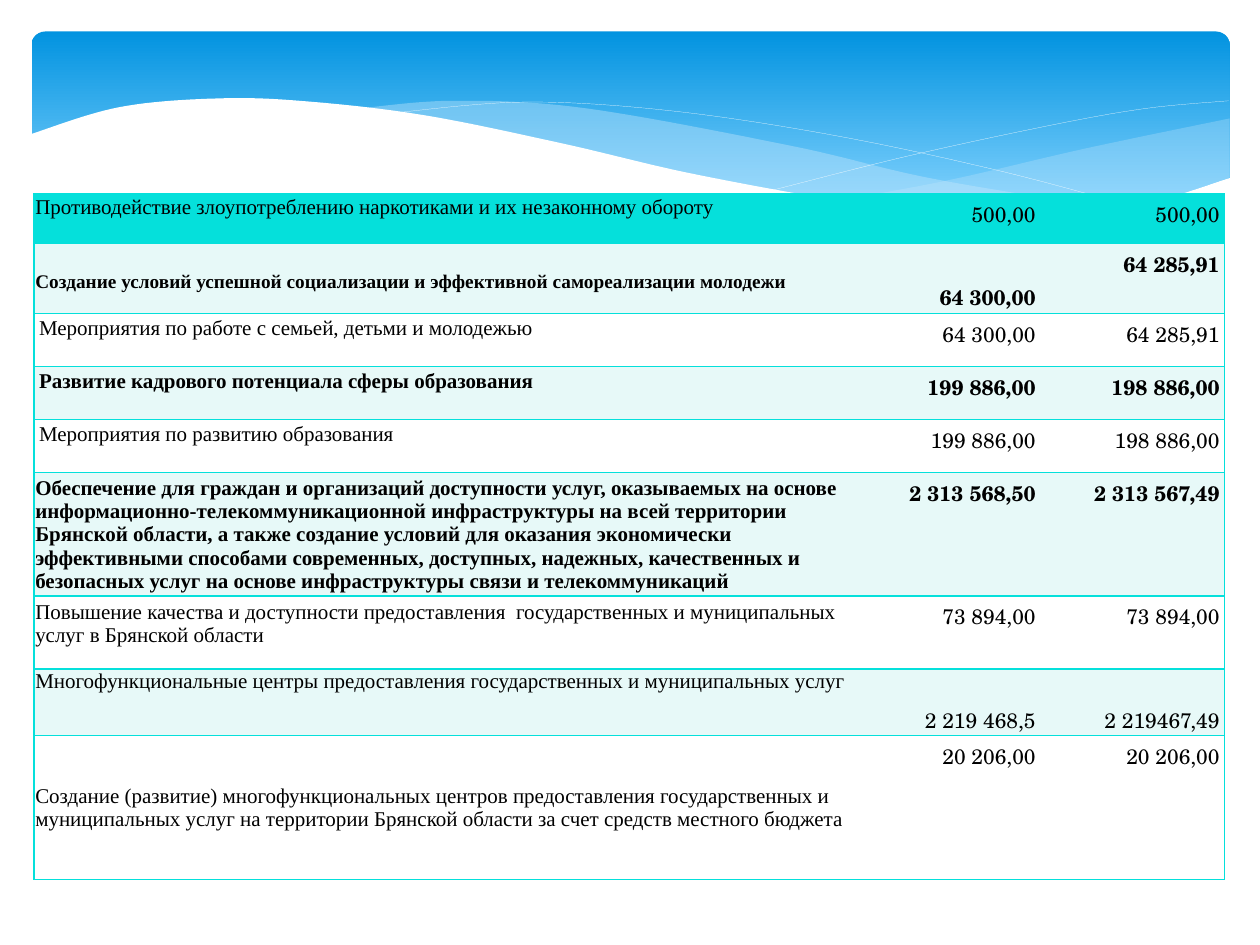
from collections import namedtuple
from itertools import pairwise

from lxml.etree import SubElement
from pptx import Presentation
from pptx.dml.color import RGBColor
from pptx.enum.shapes import MSO_SHAPE as Shape
from pptx.enum.text import MSO_ANCHOR as Anchor, PP_ALIGN as Align
from pptx.oxml.ns import qn
from pptx.util import Inches, Pt

COLORS = {"sky": "0293E0", "light sky": "83D3FE", "wave": "C6E7FC", "white": "FFFFFF",
          "black": "000000", "turquoise": "05E0DB", "pale": "E7F9F8"}
RGB = {name: RGBColor.from_string(value) for name, value in COLORS.items()}
CURVE_STEPS = 12


def smooth_curve(knots):
    """Sample a Catmull-Rom curve through the knots; two knots give a straight line."""
    padded = [knots[0], *knots, knots[-1]]
    points = [knots[0]]
    for index, (start, end) in enumerate(pairwise(knots)):
        before, after = padded[index], padded[index + 3]
        for step in range(1, CURVE_STEPS + 1):
            t = step / CURVE_STEPS
            points.append(tuple(
                b + t / 2 * (c - a + t * (2 * a - 5 * b + 4 * c - d
                                          + t * (3 * (b - c) + d - a)))
                for a, b, c, d in zip(before, start, end, after)))
    return points


def set_borders(cell, visible):
    """Draw the named cell sides in turquoise and hide the others."""
    properties = cell._tc.get_or_add_tcPr()
    for index, side in enumerate(("lnL", "lnR", "lnT", "lnB")):
        line = properties.makeelement(qn(f"a:{side}"), {"w": str(Pt(1))})
        properties.insert(index, line)
        if side in visible:
            solid = SubElement(line, qn("a:solidFill"))
            SubElement(solid, qn("a:srgbClr"), val=COLORS["turquoise"])
        else:
            SubElement(line, qn("a:noFill"))


deck = Presentation()
deck.slide_width, deck.slide_height = Inches(10), Inches(7.5)
slide = deck.slides.add_slide(deck.slide_layouts[6])

# Header band
band = slide.shapes.add_shape(
    Shape.ROUNDED_RECTANGLE, Inches(0.25), Inches(0.25), Inches(9.51), Inches(1.56))
band.adjustments[0] = 0.07
band.shadow.inherit = False
band.line.fill.background()
band.fill.gradient()
band.fill.gradient_angle = 270
for stop, position, name in zip(band.fill.gradient_stops, (0, 0.9), ("sky", "light sky")):
    stop.position = position
    stop.color.rgb = RGB[name]

# Waves over the band: each edge is a smooth curve through its crests and slopes.
# A wave without a fill is a white hairline.
Wave = namedtuple("Wave", "edges fill opacity", defaults=(None, 100))
right_wave = Wave([
    [(9.76, 0.94), (8.61, 1.18), (7.53, 1.43), (6.61, 1.6)],
    [(6.61, 1.6), (7.45, 1.69), (8.24, 1.72), (9.05, 1.63), (9.76, 1.41)],
], "wave", 29)
middle_wave = Wave([
    [(2.86, 0.86), (3.61, 0.8), (4.65, 0.86), (6.29, 1.16), (7.41, 1.42), (8.93, 1.67)],
    [(8.93, 1.67), (8.07, 1.73), (6.95, 1.65), (5.66, 1.43), (4.49, 1.16), (2.86, 0.86)],
], "wave", 40)
falling_line = Wave([
    [(3.09, 0.9), (4.16, 0.81), (5.33, 0.88), (6.65, 1.08), (7.95, 1.36), (9.07, 1.66)]])
rising_line = Wave([
    [(6.13, 1.51), (7.2, 1.24), (8.36, 0.99), (9.1, 0.86), (9.75, 0.8)]])
white_wave = Wave([
    [(9.77, 1.41), (8.99, 1.64), (8.09, 1.71), (6.88, 1.62), (5.55, 1.39), (4.47, 1.14),
     (3.4, 0.92), (2.5, 0.81), (1.77, 0.78), (0.95, 0.85), (0.23, 1.07)],
    [(0.23, 2.24), (9.77, 2.24)],
], "white")

for wave in (right_wave, middle_wave, falling_line, rising_line, white_wave):
    points = [(Inches(x), Inches(y)) for edge in wave.edges for x, y in smooth_curve(edge)]
    builder = slide.shapes.build_freeform(*points[0])
    builder.add_line_segments(points[1:], close=wave.fill is not None)
    outline = builder.convert_to_shape()
    outline.shadow.inherit = False
    if wave.fill is None:
        outline.fill.background()
        outline.line.color.rgb = RGB["white"]
        outline.line.width = Pt(0.1)
        continue
    outline.line.fill.background()
    outline.fill.solid()
    outline.fill.fore_color.rgb = RGB[wave.fill]
    if wave.opacity < 100:
        color = outline._element.spPr.find(qn("a:solidFill"))[0]
        SubElement(color, qn("a:alpha"), val=str(wave.opacity * 1000))

# Budget table: what a row does not state is regular, unindented and top-anchored
TOP, MIDDLE, BOTTOM = Anchor.TOP, Anchor.MIDDLE, Anchor.BOTTOM
Row = namedtuple("Row", "height label planned spent bold indented anchors label_size",
                 defaults=(False, False, (TOP, TOP, TOP), 12))
ROWS = [
    Row(0.39, "Противодействие злоупотреблению наркотиками и их незаконному обороту",
        "500,00", "500,00"),
    Row(0.56, "Создание условий успешной социализации и эффективной самореализации молодежи",
        "64 300,00", "64 285,91", bold=True, anchors=(BOTTOM, BOTTOM, TOP), label_size=11),
    Row(0.42, "Мероприятия по работе с семьей, детьми и молодежью",
        "64 300,00", "64 285,91", indented=True),
    Row(0.42, "Развитие кадрового потенциала сферы образования",
        "199 886,00", "198 886,00", bold=True, indented=True),
    Row(0.42, "Мероприятия по развитию образования",
        "199 886,00", "198 886,00", indented=True),
    Row(0.98, "Обеспечение для граждан и организаций доступности услуг, оказываемых на "
        "основе информационно-телекоммуникационной инфраструктуры на всей территории "
        "Брянской области, а также создание условий для оказания экономически "
        "эффективными способами современных, доступных, надежных, качественных и "
        "безопасных услуг на основе инфраструктуры связи и телекоммуникаций",
        "2 313 568,50", "2 313 567,49", bold=True, anchors=(MIDDLE, TOP, TOP)),
    Row(0.58, "Повышение качества и доступности предоставления  государственных и "
        "муниципальных услуг в Брянской области",
        "73 894,00", "73 894,00", anchors=(BOTTOM, TOP, TOP)),
    Row(0.53, "Многофункциональные центры предоставления государственных и муниципальных "
        "услуг", "2 219 468,5", "2 219467,49", anchors=(TOP, BOTTOM, BOTTOM)),
    Row(1.14, "Создание (развитие) многофункциональных центров предоставления "
        "государственных и муниципальных услуг на территории Брянской области за счет "
        "средств местного бюджета",
        "20 206,00", "20 206,00", anchors=(MIDDLE, TOP, TOP)),
]
COLUMN_WIDTHS = (6.53, 1.46, 1.46)
OUTER_SIDES = ({"lnL"}, set(), {"lnR"})

table = slide.shapes.add_table(
    len(ROWS), len(COLUMN_WIDTHS), Inches(0.27), Inches(1.54),
    Inches(sum(COLUMN_WIDTHS)), Inches(sum(row.height for row in ROWS))).table
table.first_row = table.horz_banding = False
for column, width in zip(table.columns, COLUMN_WIDTHS):
    column.width = Inches(width)

for row_index, row in enumerate(ROWS):
    table.rows[row_index].height = Inches(row.height)
    fill = "turquoise" if row_index == 0 else ("white", "pale")[row_index % 2]
    texts = (row.label, row.planned, row.spent)
    for column_index, (text, anchor) in enumerate(zip(texts, row.anchors)):
        is_label = column_index == 0
        is_tight = is_label and not row.indented
        cell = table.cell(row_index, column_index)
        cell.fill.solid()
        cell.fill.fore_color.rgb = RGB[fill]
        set_borders(cell, OUTER_SIDES[column_index] | {"lnT", "lnB"})
        cell.vertical_anchor = anchor
        cell.margin_left = cell.margin_right = Inches(0.01 if is_tight else 0.04)
        cell.margin_top = Inches(0.01 if is_tight else 0)
        cell.margin_bottom = Inches(0.17 if is_label and anchor == BOTTOM else 0)
        cell.text = text
        para = cell.text_frame.paragraphs[0]
        para.alignment = Align.LEFT if is_label else Align.RIGHT
        para.line_spacing = 1.0 if is_tight else 1.15
        para.font.name = "Times New Roman" if is_label else "TeX Gyre Schola"
        para.font.size = Pt(row.label_size if is_label else 12)
        para.font.bold = row.bold
        para.font.color.rgb = RGB["black"]

deck.save("out.pptx")
